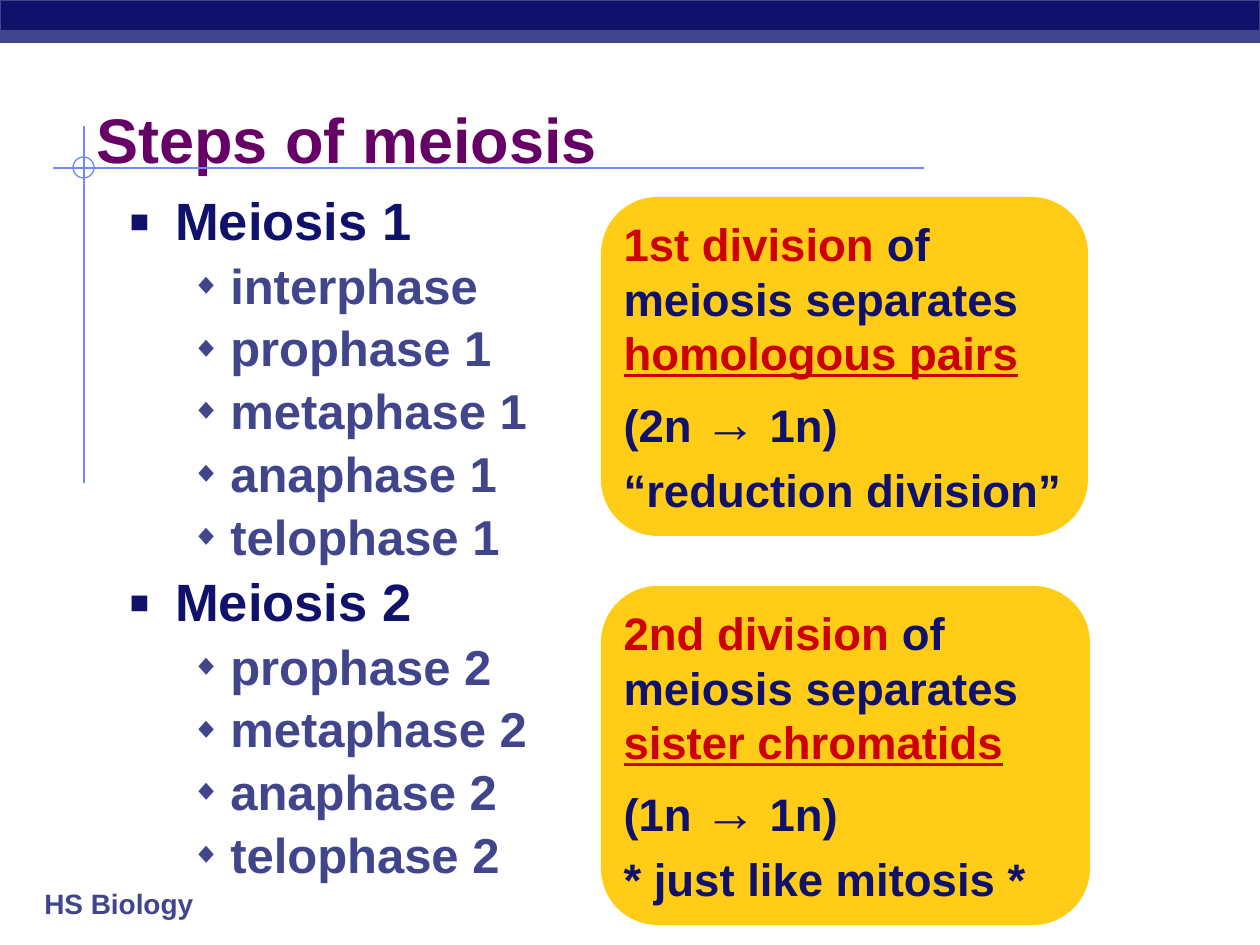
import pptx
import pptx.util
import pptx.dml.color
import pptx.enum.shapes
import pptx.enum.text
import pptx.oxml.ns
import lxml.etree

EMU_PER_PX = 914400 / 126
NAVY, SLATE, RULE = "0F116A", "40458C", "6F89F7"
RED, YELLOW, PURPLE = "CC0000", "FFCC18", "660066"
SHAPES = pptx.enum.shapes.MSO_SHAPE
ANCHOR = pptx.enum.text.MSO_ANCHOR
qn = pptx.oxml.ns.qn


def px(*lengths):
    return [pptx.util.Emu(round(length * EMU_PER_PX)) for length in lengths]


def color(text):
    return pptx.dml.color.RGBColor.from_string(text)


def set_all(target, values):
    for name, value in values.items():
        setattr(target, name, value)


def add_xml(parent, tag, **attributes):
    return lxml.etree.SubElement(parent, qn(tag), attributes)


class SlideBuilder:
    def __init__(self, slide, font="Arial"):
        self.slide = slide
        self.font = font

    def line(self, x1, y1, x2, y2, stroke):
        kind = pptx.enum.shapes.MSO_CONNECTOR.STRAIGHT
        connector = self.slide.shapes.add_connector(kind, *px(x1, y1, x2, y2))
        connector.line.color.rgb = color(stroke)
        connector.line.width = pptx.util.Pt(1)
        add_xml(connector._element.spPr, "a:effectLst")

    def shape(self, kind, place, fill=None, stroke=None):
        shape = self.slide.shapes.add_shape(kind, *px(*place))
        shape.shadow.inherit = False
        if fill:
            shape.fill.solid()
            shape.fill.fore_color.rgb = color(fill)
        else:
            shape.fill.background()
        if stroke:
            shape.line.color.rgb = color(stroke)
            shape.line.width = pptx.util.Pt(0.75)
        else:
            shape.line.fill.background()
        return shape

    def frame(self, shape, **values):
        frame = shape.text_frame
        frame.auto_size = pptx.enum.text.MSO_AUTO_SIZE.NONE
        set_all(frame, {"word_wrap": True, "vertical_anchor": ANCHOR.TOP, **values})
        return frame

    def text_box(self, place, **values):
        return self.frame(self.slide.shapes.add_textbox(*px(*place)), **values)

    def para(self, frame, spans, space_percent=0):
        """Add a paragraph of (text, size, colour, underline) spans."""
        para = frame.paragraphs[0]
        if para.runs:
            para = frame.add_paragraph()
        para.alignment = pptx.enum.text.PP_ALIGN.LEFT
        if space_percent:
            para.space_before = pptx.util.Pt(0)
            before = para._p.pPr.find(qn("a:spcBef"))
            before.clear()
            add_xml(before, "a:spcPct", val=str(space_percent * 1000))
        for text, size, tint, underline in spans:
            span = para.add_run()
            span.text = text
            set_all(span.font, {"name": self.font, "size": pptx.util.Pt(size),
                                "bold": True, "underline": underline})
            span.font.color.rgb = color(tint)
        return para

    def title(self, text, place):
        title = self.slide.shapes.title
        set_all(title, dict(zip(("left", "top", "width", "height"), px(*place))))
        frame = self.frame(title, margin_top=px(5)[0])
        self.para(frame, [(text, 36, PURPLE, False)])

    def bullet(self, frame, text, size, tint, level, left, hang, mark, mark_percent):
        para = self.para(frame, [(text, size, tint, False)], 20)
        set_all(para, {"level": level, "line_spacing": 0.9})
        properties = para._p.pPr
        margin, indent = px(left, -hang)
        properties.set("marL", str(margin))
        properties.set("indent", str(indent))
        bullet_color = add_xml(properties, "a:buClr")
        add_xml(bullet_color, "a:srgbClr", val=tint)
        add_xml(properties, "a:buSzPct", val=str(mark_percent * 1000))
        add_xml(properties, "a:buFont", typeface=self.font)
        add_xml(properties, "a:buChar", char=mark)

    def division_card(self, top, width, ordinal, separated, change, remark):
        card = self.shape(SHAPES.ROUNDED_RECTANGLE, (601, top, width, 339), YELLOW)
        card.adjustments[0] = 0.167
        frame = self.frame(card, vertical_anchor=ANCHOR.MIDDLE, margin_left=px(6)[0],
                           margin_top=0, margin_right=0, margin_bottom=0)
        before, after = change
        for spans in (
            [(f"{ordinal} division", 26, RED, False),
             (" of meiosis separates", 26, NAVY, False),
             (" ", 26, NAVY, True),
             (separated, 26, RED, True)],
            [(f"({before} ", 26, NAVY, False),
             ("→", 30, NAVY, False),
             (f" {after})", 26, NAVY, False)],
            [(remark, 26, NAVY, False)],
        ):
            self.para(frame, spans, 20)


def main():
    deck = pptx.Presentation()
    deck.slide_width, deck.slide_height = px(1260, 945)
    page = SlideBuilder(deck.slides.add_slide(deck.slide_layouts[5]))

    page.line(53, 168, 924, 168, RULE)
    page.line(84, 126, 84, 483, RULE)
    page.shape(SHAPES.OVAL, (73, 157, 21, 21), stroke=RULE)
    page.shape(SHAPES.RECTANGLE, (0, 0, 1260, 42), NAVY, SLATE)
    page.shape(SHAPES.RECTANGLE, (0, 31, 1260, 11), SLATE, SLATE)
    footer = page.text_box((32, 880, 199, 47), vertical_anchor=ANCHOR.MIDDLE)
    page.para(footer, [("HS Biology", 16, SLATE, False)], 50)

    page.title("Steps of meiosis", (84, 95, 1071, 105))

    phases = ["prophase", "metaphase", "anaphase", "telophase"]
    outline = page.text_box((116, 189, 489, 736))
    for number, extra in ((1, ["interphase"]), (2, [])):
        page.bullet(outline, f"Meiosis {number}", 30, NAVY, 0, 47, 47, "▪", 120)
        for step in extra + [f"{phase} {number}" for phase in phases]:
            page.bullet(outline, step, 28, SLATE, 1, 102, 39, "◆", 60)

    page.division_card(586, 489, "2nd", "sister chromatids", ("1n", "1n"),
                       "* just like mitosis *")
    page.division_card(197, 487, "1st", "homologous pairs", ("2n", "1n"),
                       "“reduction division”")
    deck.save("out.pptx")


if __name__ == "__main__":
    main()
